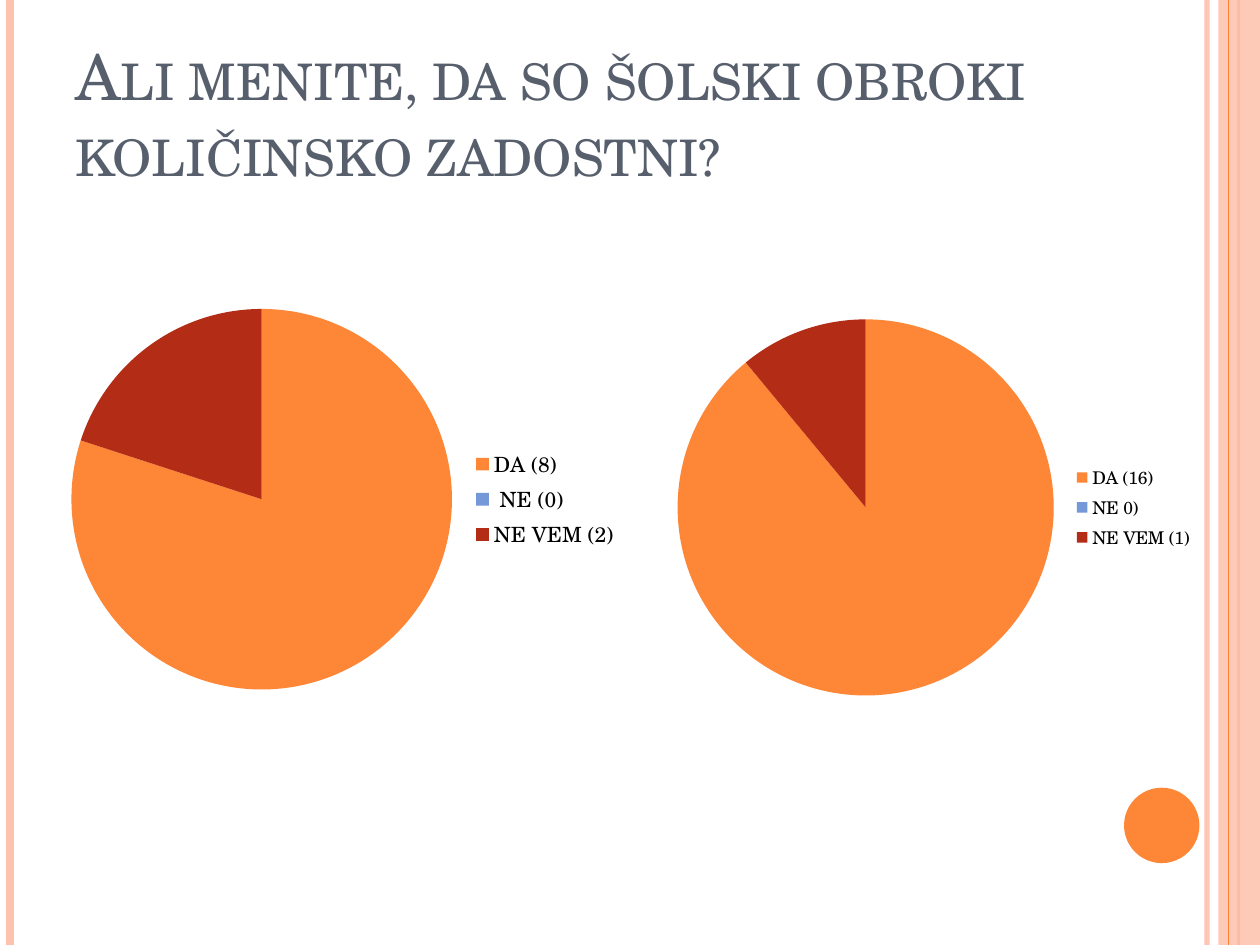
import pptx
import pptx.chart.data
import pptx.dml.color
import pptx.enum.chart
import pptx.enum.shapes
import pptx.enum.text
import pptx.oxml
import pptx.oxml.ns
import pptx.util
import lxml.etree
from dataclasses import dataclass

Cm = pptx.util.Cm
Pt = pptx.util.Pt
SLIDE_W, SLIDE_H = 25.4, 19.05


@dataclass(frozen=True)
class Theme:
    font: str = "TeX Gyre Schola"
    title: str = "575F6D"
    text: str = "000000"
    accent: str = "FE8637"
    pale: str = "FEC3AE"
    slices: tuple = ("FE8637", "7598D9", "B32C16")
    title_size: int = 36
    chart_size: int = 10
    large_legend_size: int = 12


class SlideBuilder:
    def __init__(self, slide, theme):
        self.s = slide
        self.theme = theme

    def paint(self, fill, color, alpha=100):
        fill.solid()
        fill.fore_color.rgb = pptx.dml.color.RGBColor.from_string(color)
        if alpha < 100:
            for clr in fill._xPr.iter(pptx.oxml.ns.qn("a:srgbClr")):
                node = lxml.etree.SubElement(clr, pptx.oxml.ns.qn("a:alpha"))
                node.set("val", str(alpha * 1000))

    def style_font(self, font, size, color):
        font.name = self.theme.font
        font.size = Pt(size)
        font.color.rgb = pptx.dml.color.RGBColor.from_string(color)

    def stripe(self, x, width, color, alpha=100):
        line = self.s.shapes.add_connector(
            pptx.enum.shapes.MSO_CONNECTOR.STRAIGHT, Cm(x), 0, Cm(x), Cm(SLIDE_H))
        line.line.width = Pt(width)
        self.paint(line.line.fill, color, alpha)
        lxml.etree.SubElement(line._element.spPr, pptx.oxml.ns.qn("a:effectLst"))

    def shape(self, kind, x, y, w, h, color, alpha=100):
        sp = self.s.shapes.add_shape(kind, Cm(x), Cm(y), Cm(w), Cm(h))
        sp.shadow.inherit = False
        sp.line.fill.background()
        self.paint(sp.fill, color, alpha)

    def title(self, text, x, y, w, h):
        tf = self.s.shapes.add_textbox(Cm(x), Cm(y), Cm(w), Cm(h)).text_frame
        tf.word_wrap = True
        tf.vertical_anchor = pptx.enum.text.MSO_ANCHOR.BOTTOM
        p = tf.paragraphs[0]
        self.style_font(p.font, self.theme.title_size, self.theme.title)
        r = p.add_run()
        r.text = text
        r._r.get_or_add_rPr().set("cap", "small")

    def pie(self, x, y, w, h, values, legend_size):
        data = pptx.chart.data.CategoryChartData()
        data.categories = list(values)
        data.add_series("Series 1", list(values.values()))
        chart = self.s.shapes.add_chart(
            pptx.enum.chart.XL_CHART_TYPE.PIE, Cm(x), Cm(y), Cm(w), Cm(h), data).chart
        chart.has_title = False
        self.style_font(chart.font, self.theme.chart_size, self.theme.text)
        chart.has_legend = True
        chart.legend.position = pptx.enum.chart.XL_LEGEND_POSITION.RIGHT
        chart.legend.include_in_layout = False
        self.style_font(chart.legend.font, legend_size, self.theme.text)
        plot = chart.plots[0]
        plot.vary_by_categories = True
        for i, color in enumerate(self.theme.slices):
            self.paint(plot.series[0].points[i].format.fill, color)


def main():
    prs = pptx.Presentation()
    prs.slide_width, prs.slide_height = Cm(SLIDE_W), Cm(SLIDE_H)
    theme = Theme()
    b = SlideBuilder(prs.slides.add_slide(prs.slide_layouts[6]), theme)
    kinds = pptx.enum.shapes.MSO_SHAPE

    b.stripe(24.33, 3, theme.pale, 93)
    b.stripe(0.21, 4.5, theme.pale)
    b.stripe(24.97, 1.5, theme.accent)
    b.shape(kinds.RECTANGLE, 24.56, 0, 0.84, SLIDE_H, theme.pale, 87)
    b.stripe(24.77, 0.75, theme.accent)
    b.shape(kinds.OVAL, 22.66, 15.88, 1.52, 1.52, theme.accent)

    b.title("Ali menite, da so šolski obroki količinsko zadostni?",
            1.27, 0.76, 20.75, 3.18)
    b.pie(1.09, 5.72, 11.63, 8.69,
          {"DA (8)": 80, " NE (0)": 0, "NE VEM (2)": 20}, theme.large_legend_size)
    b.pie(13.31, 5.33, 11, 9.8,
          {"DA (16)": 89, "NE 0)": 0, "NE VEM (1)": 11}, theme.chart_size)
    prs.save("out.pptx")


if __name__ == "__main__":
    main()
